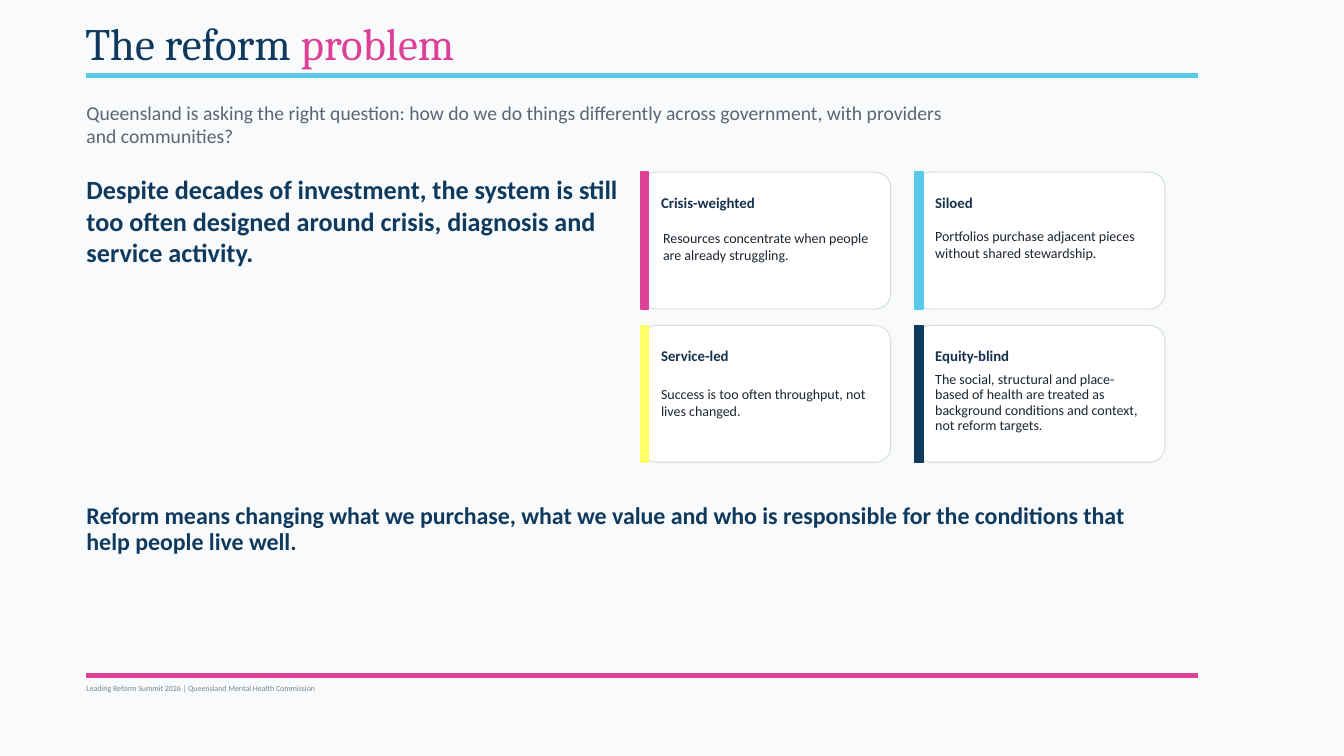
from lxml import etree
from pptx import Presentation
from pptx.dml.color import RGBColor
from pptx.enum.shapes import MSO_CONNECTOR, MSO_SHAPE
from pptx.enum.text import MSO_ANCHOR
from pptx.oxml.ns import qn
from pptx.util import Cm, Pt

STRAIGHT = MSO_CONNECTOR.STRAIGHT
RECTANGLE, ROUNDED = MSO_SHAPE.RECTANGLE, MSO_SHAPE.ROUNDED_RECTANGLE
TOP, MIDDLE = MSO_ANCHOR.TOP, MSO_ANCHOR.MIDDLE

COLOURS = {
    "background": "F8FAFB", "navy": "0F3A5E", "pink": "DD4197",
    "cyan": "57C9E9", "yellow": "FFFF66", "white": "FFFFFF",
    "card edge": "D8E0E4", "card heading": "17324D", "card text": "1C2530",
    "question": "5A6673", "footer": "7A858E",
}

TITLE = [("The reform ", "navy"), ("problem", "pink")]
QUESTION = ("Queensland is asking the right question: how do we do things "
            "differently across government, with providers\nand communities?")
PROBLEM = ("Despite decades of investment, the system is still too often "
           "designed around crisis, diagnosis and service activity.")
CONCLUSION = ("Reform means changing what we purchase, what we value and who is "
              "responsible for the conditions that help people live well.")
FOOTER = "Leading Reform Summit 2026 | Queensland Mental Health Commission"

# heading, text, accent, text offset from the card's corner, line spacing
CARDS = [
    ("Crisis-weighted",
     "Resources concentrate when people are already struggling.",
     "pink", (0.56, 1.45), None),
    ("Siloed",
     "Portfolios purchase adjacent pieces without shared stewardship.",
     "cyan", (0.51, 1.4), None),
    ("Service-led",
     "Success is too often throughput, not lives changed.",
     "yellow", (0.51, 1.52), None),
    ("Equity-blind",
     "The social, structural and place-based of health are treated as "
     "background conditions and context, not reform targets.",
     "navy", (0.51, 1.19), 0.9),
]

# Lengths in cm
RULE_LEFT, RULE_RIGHT = 2.16, 30.18
TEXT_LEFT = 2.18
CARD_LEFT, CARD_TOP = 16.15, 4.34
CARD_WIDTH, CARD_HEIGHT = 6.3, 3.45
COLUMN_STEP, ROW_STEP = 6.91, 3.86
BAR_WIDTH = 0.2


def colour(name):
    return RGBColor.from_string(COLOURS[name])


def add_rule(slide, y, line_colour):
    rule = slide.shapes.add_connector(
        STRAIGHT, Cm(RULE_LEFT), Cm(y), Cm(RULE_RIGHT), Cm(y))
    rule.line.color.rgb = colour(line_colour)
    rule.line.width = Pt(3)
    etree.SubElement(rule._element.spPr, qn("a:effectLst"))


def add_block(slide, kind, box, fill, edge, edge_width):
    block = slide.shapes.add_shape(kind, *map(Cm, box))
    block.shadow.inherit = False
    block.fill.solid()
    block.fill.fore_color.rgb = colour(fill)
    block.line.color.rgb = colour(edge)
    block.line.width = Pt(edge_width)
    return block


def add_frame(slide, box, anchor, inset=(0, 0)):
    frame = slide.shapes.add_textbox(*map(Cm, box)).text_frame
    frame.word_wrap = True
    frame.vertical_anchor = anchor
    frame.margin_left = frame.margin_right = Cm(inset[0])
    frame.margin_top = frame.margin_bottom = Cm(inset[1])
    return frame


def add_text(slide, box, text, size, text_colour, bold=False, anchor=MIDDLE,
             spacing=None):
    frame = add_frame(slide, box, anchor)
    frame.text = text
    for paragraph in frame.paragraphs:
        paragraph.line_spacing = spacing
        for run in paragraph.runs:
            style_run(run, "Calibri", size, text_colour, bold)


def style_run(run, typeface, size, text_colour, bold=False):
    run.font.name = typeface
    run.font.size = Pt(size)
    run.font.bold = bold
    run.font.color.rgb = colour(text_colour)


def add_title(slide):
    frame = add_frame(slide, (1.9, 0.43, 26.97, 1.35), TOP, (0.25, 0.13))
    paragraph = frame.paragraphs[0]
    paragraph.line_spacing = 0.9
    for words, text_colour in TITLE:
        run = paragraph.add_run()
        run.text = words
        style_run(run, "Cambria", 32, text_colour)


def add_card(slide, index, heading, text, accent, offset, spacing):
    row, column = divmod(index, 2)
    left = CARD_LEFT + column * COLUMN_STEP
    top = CARD_TOP + row * ROW_STEP
    panel = add_block(slide, ROUNDED, (left, top, CARD_WIDTH, CARD_HEIGHT),
                      "white", "card edge", 0.8)
    panel.adjustments[0] = 0.115
    add_block(slide, RECTANGLE, (left, top, BAR_WIDTH, CARD_HEIGHT),
              accent, accent, 1)
    add_text(slide, (left + 0.51, top + 0.33, 5.31, 0.86), heading, 10.6,
             "card heading", bold=True)
    add_text(slide, (left + offset[0], top + offset[1], 5.18, 1.55), text, 10,
             "card text", anchor=TOP, spacing=spacing)


def main():
    deck = Presentation()
    deck.slide_width, deck.slide_height = Cm(33.87), Cm(19.05)
    slide = deck.slides.add_slide(deck.slide_layouts[6])
    slide.background.fill.solid()
    slide.background.fill.fore_color.rgb = colour("background")

    add_rule(slide, 1.9, "cyan")
    add_rule(slide, 17.02, "pink")
    add_title(slide)
    add_text(slide, (TEXT_LEFT, 2.62, 26.14, 1.02), QUESTION, 14, "question")
    add_text(slide, (TEXT_LEFT, 4.11, 14.35, 2.9), PROBLEM, 18.7, "navy",
             bold=True)
    for index, card in enumerate(CARDS):
        add_card(slide, index, *card)
    add_text(slide, (TEXT_LEFT, 12.67, 26.62, 1.35), CONCLUSION, 17.1, "navy",
             bold=True, spacing=0.9)
    add_text(slide, (TEXT_LEFT, 17.15, 16.51, 0.41), FOOTER, 5.7, "footer")
    deck.save("out.pptx")


if __name__ == "__main__":
    main()
